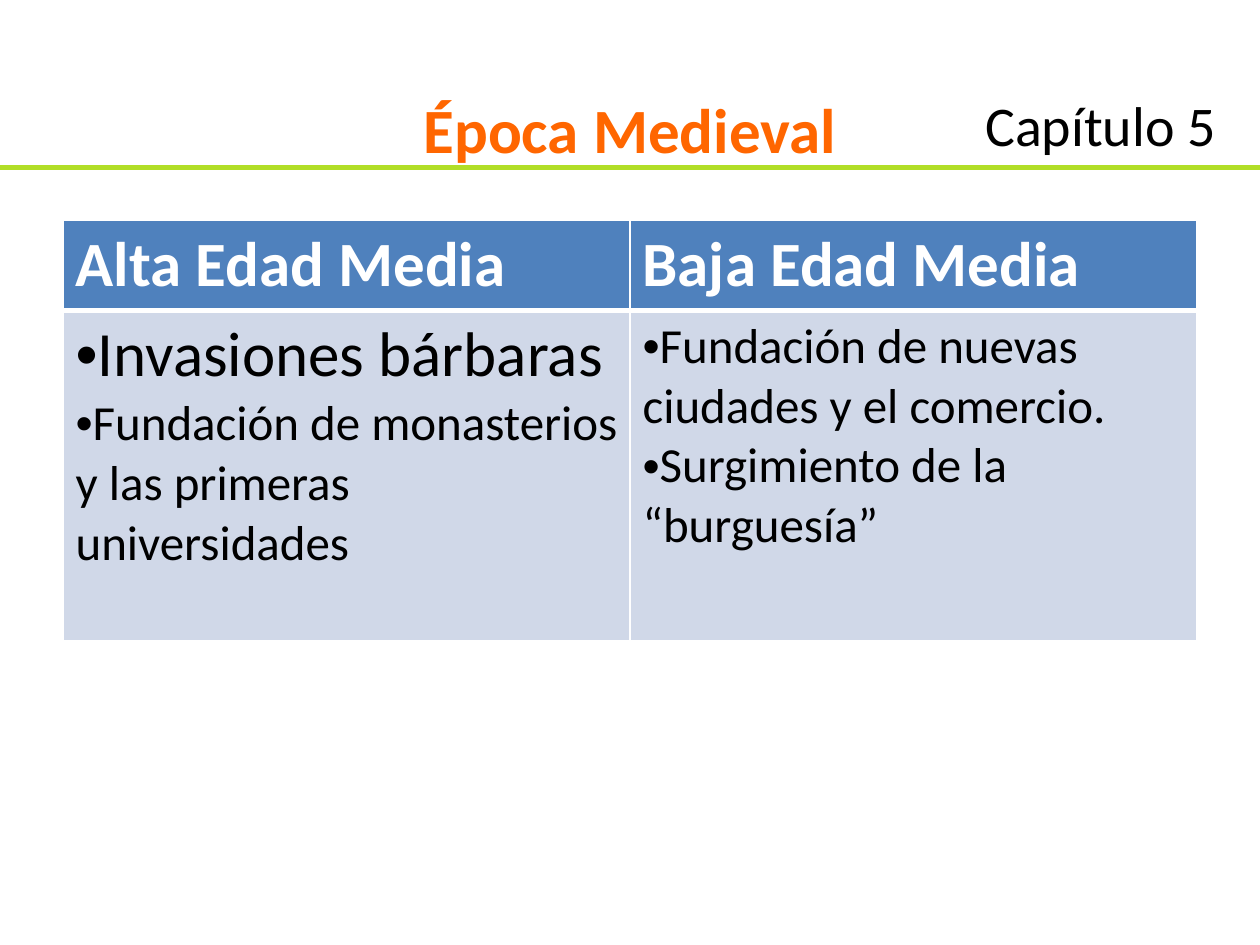
from lxml import etree
from pptx import Presentation
from pptx import util as u
from pptx.dml.color import RGBColor
from pptx.enum import shapes, text
from pptx.oxml import ns

FONT = "Calibri"
COLORS = {"title": "FF6600", "rule": "B1DE27", "header": "4F81BD",
          "body": "D0D8E8", "white": "FFFFFF", "black": "000000"}
COLUMNS = [
    ("Alta Edad Media",
     [("Invasiones bárbaras", 36),
      ("Fundación de monasterios y las primeras universidades", 28)]),
    ("Baja Edad Media",
     [("Fundación de nuevas ciudades y el comercio.", 28),
      ("Surgimiento de la “burguesía”", 28)]),
]


def rgb(name):
    """Return the named colour."""
    return RGBColor.from_string(COLORS[name])


def inches(box):
    """Convert a box of numbers to lengths."""
    return [u.Inches(v) for v in box]


def write(p, content, size, color="black", bold=False, align=None, bullet=False):
    """Write formatted text into a paragraph."""
    if bullet:
        pPr = p._p.get_or_add_pPr()
        pPr.set("marL", "0")
        pPr.set("indent", "0")
        etree.SubElement(pPr, ns.qn("a:buFont"), typeface="Arial")
        etree.SubElement(pPr, ns.qn("a:buChar"), char="•")
    p.alignment = align
    r = p.add_run()
    r.text = content
    r.font.name = FONT
    r.font.size = u.Pt(size)
    r.font.bold = bold
    r.font.color.rgb = rgb(color)


def style_cell(cell, fill, bottom=1):
    """Give a cell white borders and a solid fill."""
    tcPr = cell._tc.get_or_add_tcPr()
    for side, width in (("L", 1), ("R", 1), ("T", 1), ("B", bottom)):
        ln = etree.SubElement(tcPr, ns.qn(f"a:ln{side}"), w=str(u.Pt(width)))
        line_fill = etree.SubElement(ln, ns.qn("a:solidFill"))
        etree.SubElement(line_fill, ns.qn("a:srgbClr"), val=COLORS["white"])
    cell.fill.solid()
    cell.fill.fore_color.rgb = rgb(fill)


def add_rule(s, box):
    """Draw the horizontal rule along the top of a box."""
    x, y, w, _ = inches(box)
    rule = s.shapes.add_connector(shapes.MSO_CONNECTOR.STRAIGHT, x, y, x + w, y)
    rule.line.color.rgb = rgb("rule")
    rule.line.width = u.Pt(2.75)
    etree.SubElement(rule._element.spPr, ns.qn("a:effectLst"))


def add_title(s, box):
    """Place the slide title."""
    sp = s.shapes.title
    sp.left, sp.top, sp.width, sp.height = inches(box)
    tf = sp.text_frame
    tf.auto_size = text.MSO_AUTO_SIZE.NONE
    tf.vertical_anchor = text.MSO_ANCHOR.TOP
    write(tf.paragraphs[0], "Época Medieval", 36, "title", True, text.PP_ALIGN.CENTER)


def add_chapter(s, box):
    """Place the chapter label."""
    tf = s.shapes.add_textbox(*inches(box)).text_frame
    tf.word_wrap = True
    write(tf.paragraphs[0], "Capítulo 5", 32, align=text.PP_ALIGN.RIGHT)


def add_periods(s, box, header_height=0.7):
    """Place the table that compares both periods."""
    table = s.shapes.add_table(2, len(COLUMNS), *inches(box)).table
    table.rows[0].height = u.Inches(header_height)
    table.rows[1].height = u.Inches(box[3] - header_height)
    for col, (heading, items) in enumerate(COLUMNS):
        head, body = table.cell(0, col), table.cell(1, col)
        style_cell(head, "header", bottom=3)
        style_cell(body, "body")
        write(head.text_frame.paragraphs[0], heading, 36, "white", True)
        tf = body.text_frame
        for i, (item, size) in enumerate(items):
            p = tf.add_paragraph() if i else tf.paragraphs[0]
            write(p, item, size, bullet=True)


def main():
    """Build and save the slide."""
    prs = Presentation()
    prs.slide_width, prs.slide_height = u.Inches(10), u.Inches(7.5)
    s = prs.slides.add_slide(prs.slide_layouts[5])
    add_rule(s, (0, 1.33, 10, 0))
    add_title(s, (1.5, 0.67, 7, 0.67))
    add_periods(s, (0.5, 1.75, 9, 3.32))
    add_chapter(s, (6.92, 0.67, 2.83, 0.83))
    prs.save("out.pptx")


if __name__ == "__main__":
    main()
